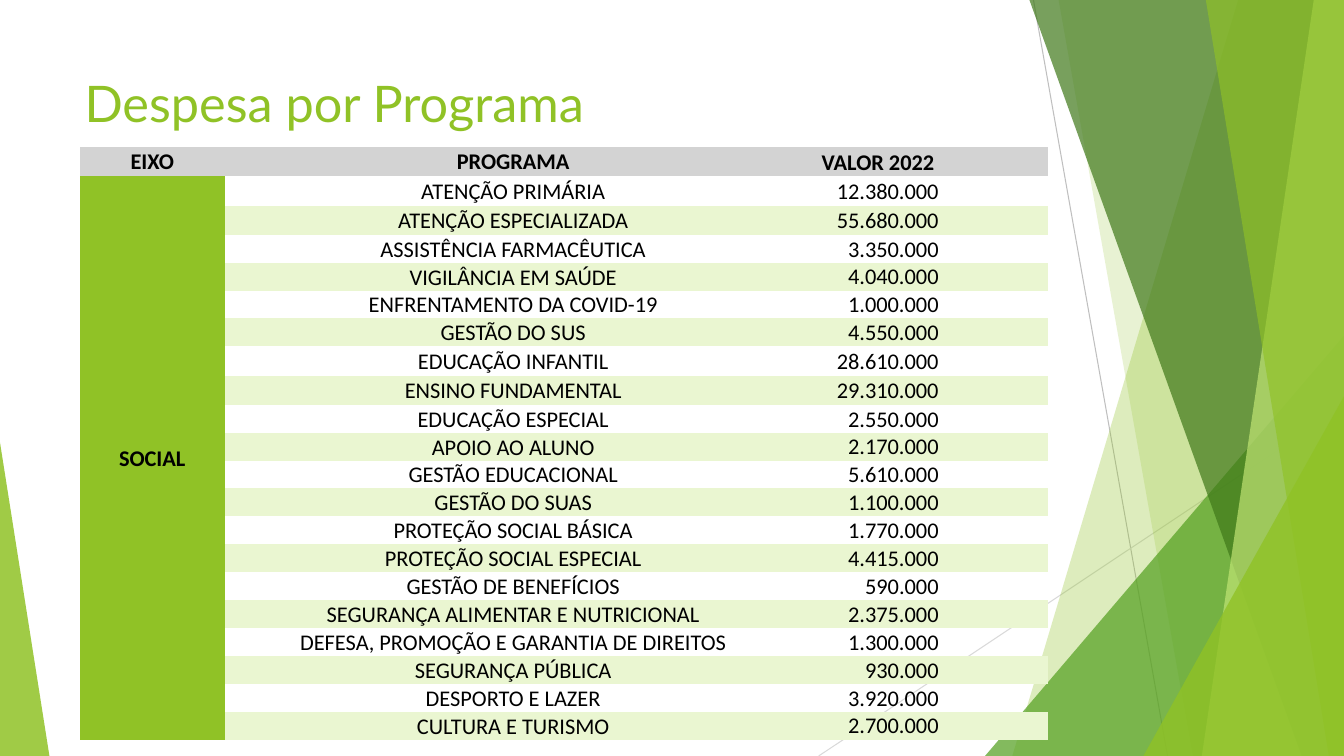
from lxml import etree
from pptx import Presentation
from pptx import util as u
from pptx.dml.color import RGBColor
from pptx.enum import shapes, text
from pptx.oxml.ns import qn

GREEN = "90C226"
BAND = "EAF6D1"
NO_STYLE = "{2D5ABB26-0587-4C30-8999-92F81FD0307C}"
PROGRAMS = [
    ("ATENÇÃO PRIMÁRIA", "12.380.000"),
    ("ATENÇÃO ESPECIALIZADA", "55.680.000"),
    ("ASSISTÊNCIA FARMACÊUTICA", "3.350.000"),
    ("VIGILÂNCIA EM SAÚDE", "4.040.000"),
    ("ENFRENTAMENTO DA COVID-19", "1.000.000"),
    ("GESTÃO DO SUS", "4.550.000"),
    ("EDUCAÇÃO INFANTIL", "28.610.000"),
    ("ENSINO FUNDAMENTAL", "29.310.000"),
    ("EDUCAÇÃO ESPECIAL", "2.550.000"),
    ("APOIO AO ALUNO", "2.170.000"),
    ("GESTÃO EDUCACIONAL", "5.610.000"),
    ("GESTÃO DO SUAS", "1.100.000"),
    ("PROTEÇÃO SOCIAL BÁSICA", "1.770.000"),
    ("PROTEÇÃO SOCIAL ESPECIAL", "4.415.000"),
    ("GESTÃO DE BENEFÍCIOS", "590.000"),
    ("SEGURANÇA ALIMENTAR E NUTRICIONAL", "2.375.000"),
    ("DEFESA, PROMOÇÃO E GARANTIA DE DIREITOS", "1.300.000"),
    ("SEGURANÇA PÚBLICA", "930.000"),
    ("DESPORTO E LAZER", "3.920.000"),
    ("CULTURA E TURISMO", "2.700.000"),
]


def color(value):
    return RGBColor.from_string(value)


class Painter:
    """Draws styled elements on the current page."""

    def __init__(self, page):
        self.page = page
        self.heading_font = "Lato"
        self.table_font = "Calibri"

    def line(self, start, end, stroke):
        line = self.page.shapes.add_connector(
            shapes.MSO_CONNECTOR.STRAIGHT, *map(u.Inches, start + end))
        line.line.color.rgb = color(stroke)
        line.line.width = u.Pt(0.75)
        etree.SubElement(line.element.spPr, qn("a:effectLst"))

    def paint(self, shape, fill, opacity):
        shape.shadow.inherit = False
        shape.fill.solid()
        shape.fill.fore_color.rgb = color(fill)
        shape.line.fill.background()
        tone = shape.element.spPr.find(".//" + qn("a:srgbClr"))
        etree.SubElement(tone, qn("a:alpha"), val=str(opacity * 1000))

    def polygon(self, points, fill, opacity):
        corners = [(u.Inches(x), u.Inches(y)) for x, y in points]
        builder = self.page.shapes.build_freeform(*corners[0])
        builder.add_line_segments(corners[1:], close=True)
        self.paint(builder.convert_to_shape(), fill, opacity)

    def triangle(self, place, apex, fill, opacity):
        shape = self.page.shapes.add_shape(
            shapes.MSO_SHAPE.ISOSCELES_TRIANGLE, *map(u.Inches, place))
        shape.adjustments[0] = apex
        self.paint(shape, fill, opacity)

    def format(self, para, font, size, tone, bold=False):
        for span in para.runs:
            span.font.name = font
            span.font.size = u.Pt(size)
            span.font.color.rgb = color(tone)
            span.font.bold = bold

    def title(self, words, place):
        box = self.page.shapes.add_textbox(*map(u.Inches, place))
        box.text_frame.word_wrap = True
        box.text_frame.text = words
        self.format(box.text_frame.paragraphs[0], self.heading_font, 36, GREEN)

    def cell(self, cell, words, fill=None, bold=False, align=text.PP_ALIGN.CENTER,
             anchor=text.MSO_ANCHOR.MIDDLE, left=0.01, right=0.01):
        cell.text = words
        cell.vertical_anchor = anchor
        cell.margin_left, cell.margin_right = u.Inches(left), u.Inches(right)
        cell.margin_top, cell.margin_bottom = u.Inches(0.01), 0
        para = cell.text_frame.paragraphs[0]
        para.alignment = align
        self.format(para, self.table_font, 16, "000000", bold)
        if fill:
            cell.fill.solid()
            cell.fill.fore_color.rgb = color(fill)
        else:
            cell.fill.background()

    def program_table(self, place, widths):
        frame = self.page.shapes.add_table(
            len(PROGRAMS) + 1, len(widths), *map(u.Inches, place))
        table = frame.table
        table.first_row = table.horz_banding = False
        next(frame.element.iter(qn("a:tableStyleId"))).text = NO_STYLE
        for column, width in zip(table.columns, widths):
            column.width = u.Inches(width)

        bottom = text.MSO_ANCHOR.BOTTOM
        header = "D3D3D3"
        table.rows[0].height = u.Inches(0.29)
        self.cell(table.cell(0, 0), "EIXO", header, True)
        self.cell(table.cell(0, 1), "PROGRAMA", header, True)
        self.cell(table.cell(0, 2), "VALOR 2022", header, True,
                  text.PP_ALIGN.LEFT, bottom, left=0.2)
        for index, (program, value) in enumerate(PROGRAMS, 1):
            tall = len(value) == len("12.380.000")
            table.rows[index].height = u.Inches(0.29 if tall else 0.26)
            fill = BAND if index % 2 == 0 else None
            self.cell(table.cell(index, 0), "SOCIAL" if index == 1 else "", GREEN, True)
            self.cell(table.cell(index, 1), program, fill)
            self.cell(table.cell(index, 2), value, fill, False,
                      text.PP_ALIGN.RIGHT, bottom, right=1.08)
        table.cell(1, 0).merge(table.cell(len(PROGRAMS), 0))


def main():
    deck = Presentation()
    deck.slide_width, deck.slide_height = u.Inches(13.33), u.Inches(7.5)
    painter = Painter(deck.slides.add_slide(deck.slide_layouts[6]))

    def facet(top_x, bottom_x, fill, opacity):
        painter.polygon([(top_x, 0), (13.33, 0), (13.33, 7.5), (bottom_x, 7.5)],
                        fill, opacity)

    painter.line((10.25, 0), (11.58, 7.5), "BFBFBF")
    painter.line((13.33, 4.03), (8.12, 7.5), "D9D9D9")
    facet(12.28, 10.04, GREEN, 30)
    facet(10.5, 11.83, GREEN, 20)
    painter.triangle((9.77, 3.33, 3.56, 4.17), 1, "54A021", 72)
    facet(10.21, 12.91, "3F7819", 70)
    facet(13.03, 11.92, "C0E474", 70)
    facet(11.96, 13.18, GREEN, 65)
    painter.triangle((11.34, 3.93, 1.99, 3.57), 1, GREEN, 80)
    painter.triangle((0, 4.39, 0.49, 3.11), 0, GREEN, 85)
    painter.title("Despesa por Programa", (0.74, 0.67, 9.4, 1.44))
    painter.program_table((0.79, 1.46, 9.6, 5.86), (1.44, 5.72, 2.44))
    deck.save("out.pptx")


if __name__ == "__main__":
    main()
